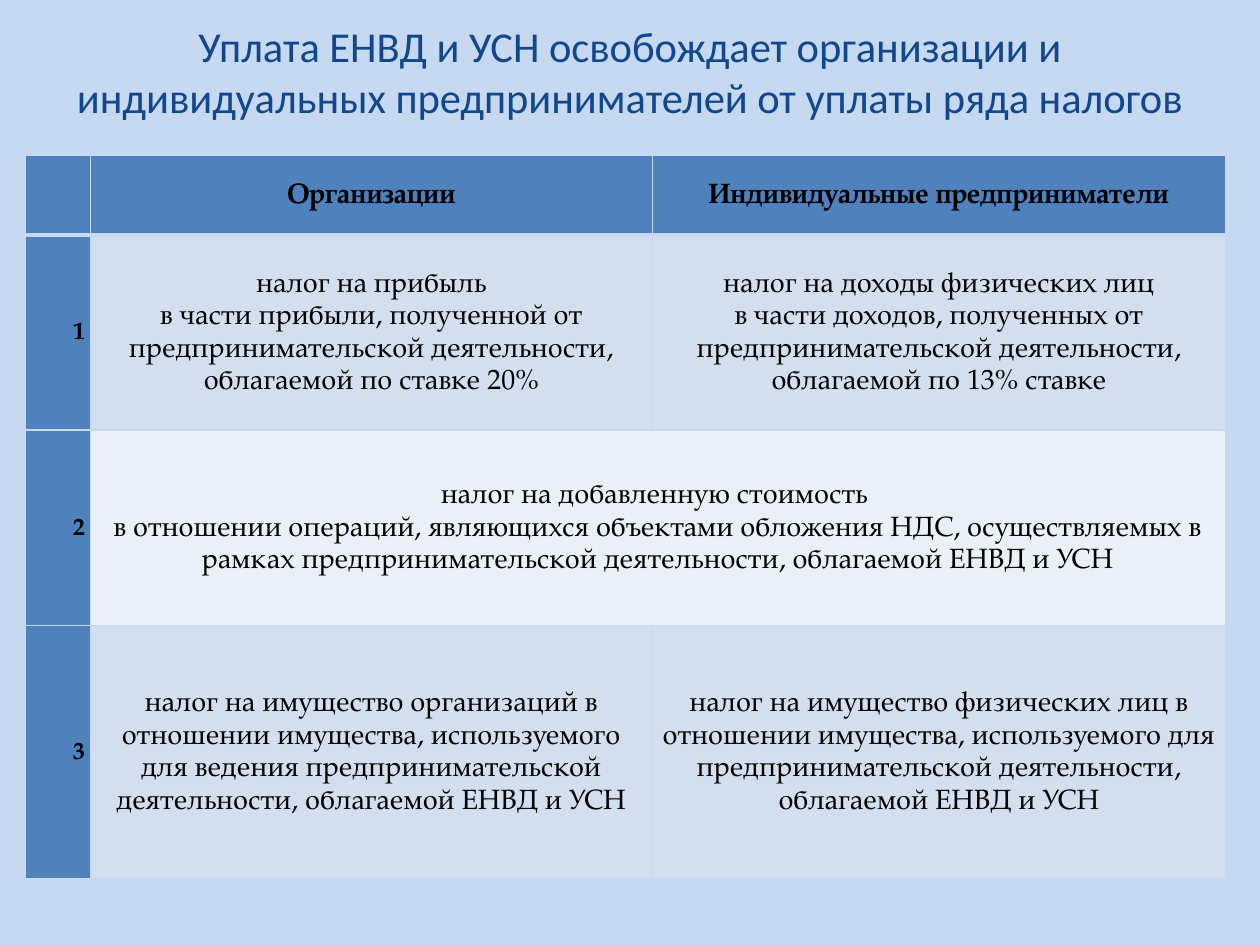
from lxml.etree import SubElement
from pptx import Presentation
from pptx.dml.color import RGBColor
from pptx.enum.text import MSO_ANCHOR, MSO_AUTO_SIZE, PP_ALIGN
from pptx.oxml.ns import qn
from pptx.util import Pt

# Theme: colours, fonts and type sizes
theme = dict(
    back="C6D9F0", title="11478B", ink="000000", head="4F81BD",
    dark="D3DFEE", light="EAF0F7",
    sans="Calibri", serif="TeX Gyre Pagella",
    big=24.3, text=16, small=14,
)


def write(frame, text, font="serif", size="text", color="ink", bold=False,
          align=PP_ALIGN.CENTER, space=1.15):
    """Fill a text frame, one paragraph per line of text."""
    frame.text = text
    frame.word_wrap = True
    for para in frame.paragraphs:
        para.alignment = align
        para.line_spacing = space
        for run in para.runs:
            run.font.name = theme[font]
            run.font.size = Pt(theme[size])
            run.font.bold = bold
            run.font.color.rgb = RGBColor.from_string(theme[color])


def edge(cell, side, width):
    """Draw one border of a table cell."""
    props = cell._tc.get_or_add_tcPr()
    line = SubElement(props, qn(f"a:ln{side}"), w=str(Pt(width)))
    fill = SubElement(line, qn("a:solidFill"))
    SubElement(fill, qn("a:srgbClr"), val=theme["back"])


# Slide and background
deck = Presentation()
deck.slide_width, deck.slide_height = Pt(720), Pt(540)
slide = deck.slides.add_slide(deck.slide_layouts[5])
slide.background.fill.solid()
slide.background.fill.fore_color.rgb = RGBColor.from_string(theme["back"])

# Title
title = slide.shapes.title
title.left, title.top, title.width, title.height = Pt(36), Pt(9.4), Pt(648), Pt(62.6)
write(title.text_frame,
      "Уплата ЕНВД и УСН освобождает организации и индивидуальных "
      "предпринимателей от уплаты ряда налогов",
      font="sans", size="big", color="title", space=1.0)
title.text_frame.auto_size = MSO_AUTO_SIZE.NONE
title.text_frame.vertical_anchor = MSO_ANCHOR.MIDDLE

# Table contents; None marks a cell merged with the one before it
rows = [
    ["", "Организации", "Индивидуальные предприниматели"],
    ["1",
     "налог на прибыль\nв части прибыли, полученной от предпринимательской "
     "деятельности, облагаемой по ставке 20%",
     "налог на доходы физических лиц\nв части доходов, полученных от "
     "предпринимательской деятельности, облагаемой по 13% ставке"],
    ["2",
     "налог на добавленную стоимость \nв отношении операций, являющихся "
     "объектами обложения НДС, осуществляемых в рамках предпринимательской "
     "деятельности, облагаемой ЕНВД и УСН",
     None],
    ["3",
     "налог на имущество организаций в отношении имущества, используемого "
     "для ведения предпринимательской деятельности, облагаемой ЕНВД и УСН",
     "налог на имущество физических лиц в отношении имущества, используемого "
     "для предпринимательской деятельности, облагаемой ЕНВД и УСН"],
]
wide = [37.2, 321.2, 327.6]
high = [45.4, 111.6, 111.6, 144.8]

# Table grid
table = slide.shapes.add_table(len(rows), len(wide), Pt(14.4), Pt(88.8),
                               Pt(sum(wide)), Pt(sum(high))).table
for col, width in zip(table.columns, wide):
    col.width = Pt(width)
for row, height in zip(table.rows, high):
    row.height = Pt(height)
table.cell(2, 1).merge(table.cell(2, 2))

# Cells: a thick rule parts the header row from the body
for r, row in enumerate(rows):
    for c, text in enumerate(row):
        cell = table.cell(r, c)
        for side in "LRTB":
            thick = (r, side) in [(0, "B"), (1, "T")]
            edge(cell, side, 3 if thick else 1)
        head = r == 0 or c == 0
        tone = "head" if head else "dark" if r % 2 else "light"
        cell.fill.solid()
        cell.fill.fore_color.rgb = RGBColor.from_string(theme[tone])
        cell.vertical_anchor = MSO_ANCHOR.MIDDLE
        cell.margin_left = cell.margin_right = Pt(3)
        cell.margin_top = cell.margin_bottom = Pt(3)
        if text:
            write(cell.text_frame, text, bold=head,
                  size="text" if c else "small",
                  align=PP_ALIGN.CENTER if c else PP_ALIGN.RIGHT)

deck.save("out.pptx")
